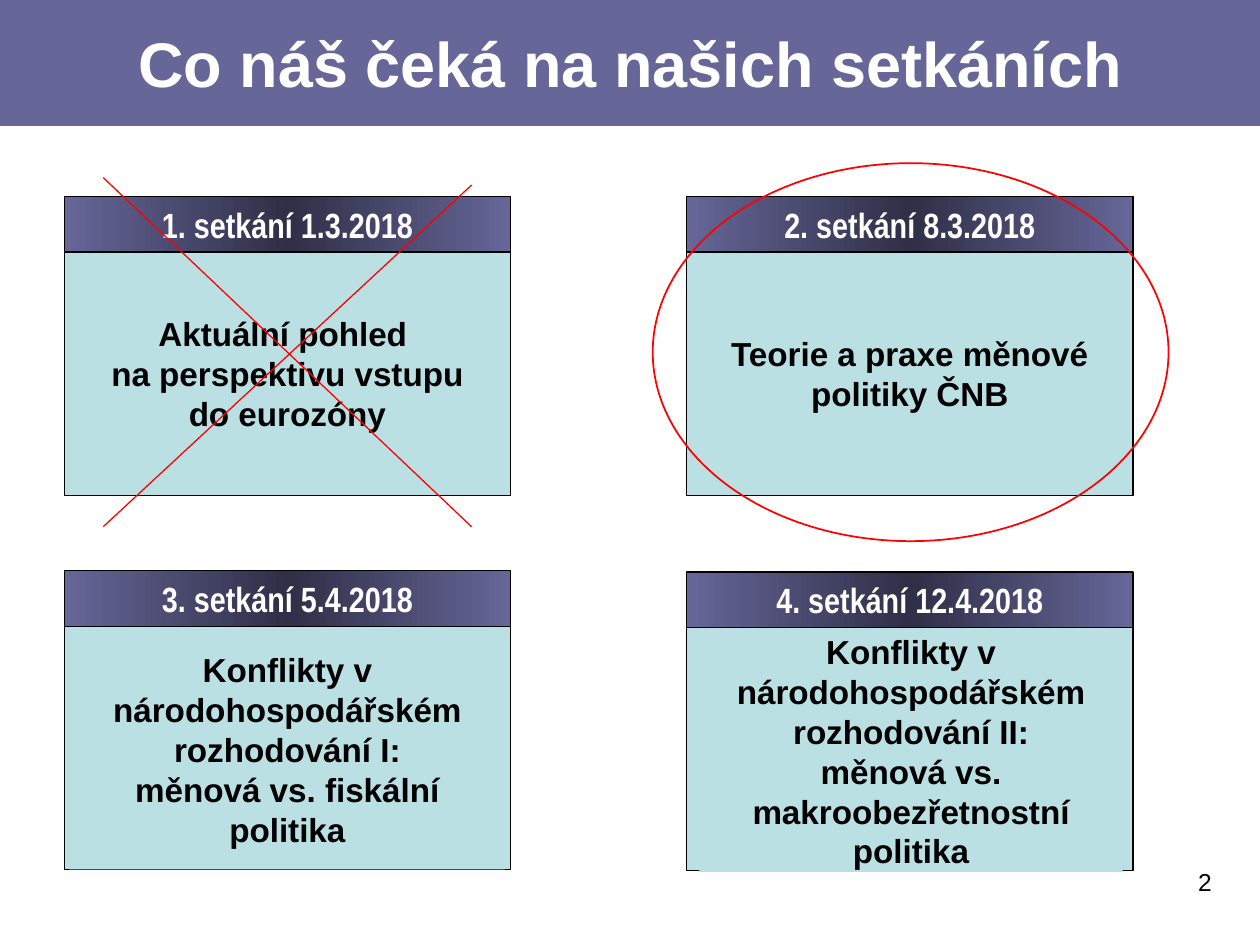
from copy import deepcopy
from dataclasses import dataclass

from pptx import Presentation
from pptx.dml.color import RGBColor
from pptx.enum.shapes import MSO_CONNECTOR, MSO_SHAPE
from pptx.enum.text import MSO_ANCHOR, PP_ALIGN
from pptx.oxml.ns import qn
from pptx.oxml.xmlchemy import OxmlElement
from pptx.util import Pt

VIOLET, DARK, AQUA = "666699", "2F2F47", "BBE0E3"
BLACK, WHITE, RED = "000000", "FFFFFF", "FF0000"
LEFT, RIGHT = 36.75, 392.4
CARD_W, HEAD_H, BODY_H = 255, 31.75, 139


@dataclass
class Box:
    x: float
    y: float
    w: float
    h: float


@dataclass
class Card:
    x: float
    y: float
    head: str
    text: str
    patch: Box | None = None  # inner text panel, if the text wraps


CARDS = [
    Card(LEFT, 112.25, "1. setkání 1.3.2018",
         "Aktuální pohled \nna perspektivu vstupu\ndo eurozóny"),
    Card(RIGHT, 112.25, "2. setkání 8.3.2018",
         "Teorie a praxe měnové\npolitiky ČNB"),
    Card(LEFT, 326.2, "3. setkání 5.4.2018",
         "Konflikty v národohospodářském rozhodování I:\v"
         "měnová vs. fiskální politika", Box(39.75, 359.2, 249, 137.6)),
    Card(RIGHT, 326.9, "4. setkání 12.4.2018",
         "Konflikty v národohospodářském rozhodování II:\v"
         "měnová vs. makroobezřetnostní politika", Box(399.6, 360, 242, 138.2)),
]


def rgb(code: str) -> RGBColor:
    return RGBColor.from_string(code)


def draw(box: Box, fill: str | None, edge: str | None,
         kind=MSO_SHAPE.RECTANGLE, wide: float = 0.75):
    shape = slide.shapes.add_shape(kind, Pt(box.x), Pt(box.y), Pt(box.w), Pt(box.h))
    shape.shadow.inherit = False
    if fill:
        shape.fill.solid()
        shape.fill.fore_color.rgb = rgb(fill)
    else:
        shape.fill.background()
    if edge:
        shape.line.color.rgb = rgb(edge)
        shape.line.width = Pt(wide)
    else:
        shape.line.fill.background()
    return shape


def write(shape, text: str, size: float, color: str, bold: bool = True,
          face: str = "Arial", align=PP_ALIGN.CENTER, wrap: bool = True,
          anchor=MSO_ANCHOR.MIDDLE) -> None:
    frame = shape.text_frame
    frame.text = text
    frame.word_wrap = wrap
    frame.vertical_anchor = anchor
    for para in frame.paragraphs:
        para.alignment = align
        font = para.font
        font.name, font.size, font.bold = face, Pt(size), bold
        font.color.rgb = rgb(color)


def shade(shape) -> None:
    """Fill from violet to dark and back, left to right."""
    fill = shape.fill
    fill.gradient()
    fill.gradient_angle = 0
    stops = shape._element.spPr.find(".//" + qn("a:gsLst"))
    stops.append(deepcopy(stops[-1]))
    for stop, place, color in zip(fill.gradient_stops, (0, 0.5, 1),
                                  (VIOLET, DARK, VIOLET)):
        stop.position = place
        stop.color.rgb = rgb(color)


def add_card(card: Card) -> None:
    body = draw(Box(card.x, card.y + HEAD_H, CARD_W, BODY_H), AQUA, BLACK)
    head = draw(Box(card.x, card.y, CARD_W, HEAD_H), VIOLET, BLACK)
    shade(head)
    write(head, card.head, 20, WHITE, face="Arial Narrow")
    if card.patch:
        body = draw(card.patch, AQUA, None)
    write(body, card.text, 19, BLACK, wrap=card.patch is not None)


def add_line(x1: float, y1: float, x2: float, y2: float) -> None:
    line = slide.shapes.add_connector(MSO_CONNECTOR.STRAIGHT,
                                      Pt(x1), Pt(y1), Pt(x2), Pt(y2))
    line.line.color.rgb = rgb(RED)
    line.line.width = Pt(0.75)
    line._element.spPr.append(OxmlElement("a:effectLst"))


def add_text(box: Box, text: str, size: float, color: str, **style) -> None:
    area = slide.shapes.add_textbox(Pt(box.x), Pt(box.y), Pt(box.w), Pt(box.h))
    write(area, text, size, color, **style)


deck = Presentation()
deck.slide_width, deck.slide_height = Pt(720), Pt(540)
slide = deck.slides.add_slide(deck.slide_layouts[6])

# Title band and page number
draw(Box(0, 0, 720, 71.5), VIOLET, VIOLET)
add_text(Box(14.25, 0, 692, 71.5), "Co náš čeká na našich setkáních", 36, WHITE)
add_text(Box(516, 492, 183.5, 37.5), "2", 14, BLACK, bold=False,
         align=PP_ALIGN.RIGHT, anchor=MSO_ANCHOR.TOP)

# Meetings
for card in CARDS:
    add_card(card)

# First meeting crossed out, second one circled
add_line(59, 301, 269.5, 105.75)
add_line(269.5, 301, 59, 101.5)
draw(Box(373, 93.25, 294.75, 216), None, RED, MSO_SHAPE.OVAL, 1)

deck.save("out.pptx")
